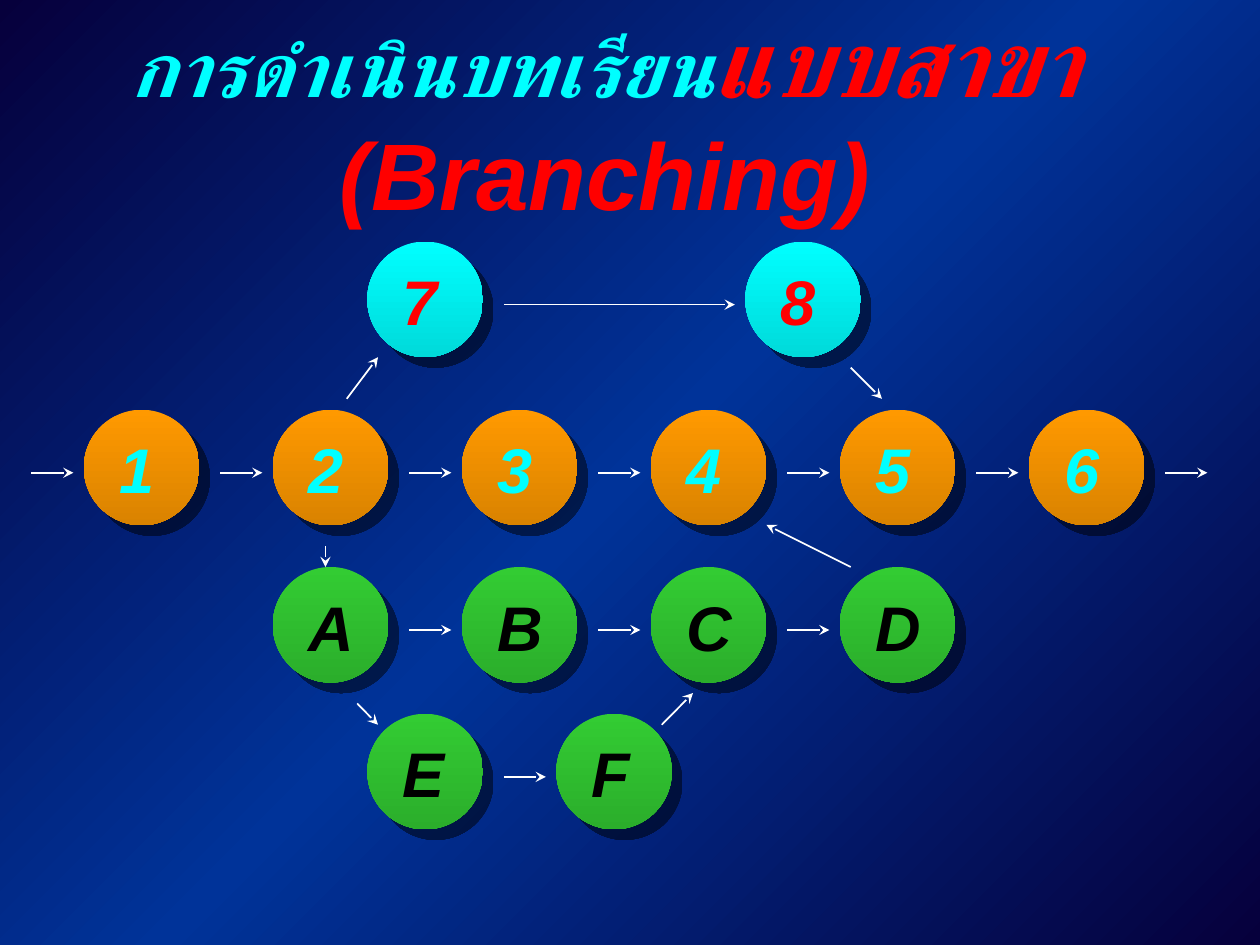
from pptx import Presentation
from pptx import util as u
from pptx.dml import color
from pptx.enum import shapes, text
from pptx.oxml import parse_xml
from pptx.oxml import ns

COLORS = {"night": "06003C", "royal": "003399", "cyan": "00FFFF", "red": "FF0000",
          "orange": "FF9900", "green": "33CC33", "black": "000000", "white": "FFFFFF"}
FONT = {"name": "Arial", "bold": True, "italic": True}
CIRCLE = 2.33
STEP = 3.81
FIRST_LEFT = 1.69
ROWS = [
    ("78", 1.5, 4.87, 2, "cyan", "red", 0),
    ("123456", 0, 8.26, 1, "orange", "cyan", 1),
    ("ABCD", 1, 11.43, 1, "green", "black", 0),
    ("EF", 1.5, 14.39, 1, "green", "black", 0),
]
BRANCHES = [
    (6.99, 8.04, 7.62, 7.2), (17.15, 7.41, 17.78, 8.04), (6.56, 11.01, 6.56, 11.43),
    (7.2, 14.18, 7.62, 14.61), (13.34, 14.61, 13.97, 13.97), (17.15, 11.43, 15.45, 10.58),
]


def make_element(tag, content="", **attributes):
    """Return a drawing element with the given attributes and inner markup."""
    values = " ".join(f'{key}="{value}"' for key, value in attributes.items())
    return parse_xml(f'<a:{tag} {ns.nsdecls("a")} {values}>{content}</a:{tag}>')


def set_values(target, values):
    """Set every named attribute on the target."""
    for key, value in values.items():
        setattr(target, key, value)


def paint_gradient(fill, element, angle, stops):
    """Fill with a linear gradient of (position, colour name, shade) stops."""
    fill.gradient()
    fill.gradient_angle = 360 - angle
    stop_list = element.find(".//" + ns.qn("a:gsLst"))
    for stop in list(stop_list):
        stop_list.remove(stop)
    for position, name, shade in stops:
        mark = f'<a:shade val="{shade * 1000}"/>' if shade < 100 else ""
        content = f'<a:srgbClr val="{COLORS[name]}">{mark}</a:srgbClr>'
        stop_list.append(make_element("gs", content, pos=position * 1000))


def write_span(para, words, size, name):
    """Add a bold italic run in the given size and colour."""
    span = para.add_run()
    span.text = words
    set_values(span.font, {**FONT, "size": u.Pt(size)})
    span.font.color.rgb = color.RGBColor.from_string(COLORS[name])


def draw_title(page, box):
    """Place and format the two-colour title."""
    title = page.shapes.title
    set_values(title, dict(zip(("left", "top", "width", "height"), map(u.Cm, box))))
    frame = title.text_frame
    set_values(frame, {"word_wrap": True, "auto_size": text.MSO_AUTO_SIZE.NONE,
                       "vertical_anchor": text.MSO_ANCHOR.MIDDLE, "margin_left": 0,
                       "margin_right": u.Cm(1.98), "margin_top": 0, "margin_bottom": 0})
    para = frame.paragraphs[0]
    set_values(para, {"alignment": text.PP_ALIGN.CENTER, "line_spacing": 1.0,
                      "space_before": u.Pt(0)})
    write_span(para, "การดำเนินบทเรียน", 44, "cyan")
    write_span(para, "แบบสาขา (Branching)", 54, "red")


def draw_arrow(page, *ends):
    """Draw a thin white arrow between two points."""
    arrow = page.shapes.add_connector(shapes.MSO_CONNECTOR.STRAIGHT, *map(u.Cm, ends))
    arrow.line.width = u.Pt(1)
    arrow.line.color.rgb = color.RGBColor.from_string(COLORS["white"])
    properties = arrow.element.spPr
    properties.find(ns.qn("a:ln")).append(make_element("tailEnd", type="stealth"))
    properties.append(make_element("effectLst"))


def draw_node(page, left, top, label, fill_name, font_name):
    """Draw a shaded circle with its label."""
    circle = page.shapes.add_shape(shapes.MSO_SHAPE.OVAL, *map(u.Cm, (left, top, CIRCLE, CIRCLE)))
    paint_gradient(circle.fill, circle.element, 90, [(0, fill_name, 100), (100, fill_name, 70)])
    circle.line.fill.background()
    circle.shadow.inherit = False
    tint = f'<a:srgbClr val="{COLORS["black"]}"><a:alpha val="50000"/></a:srgbClr>'
    effects = circle.element.spPr.find(ns.qn("a:effectLst"))
    effects.append(make_element("outerShdw", tint, dist=u.Pt(8.5), dir=45 * 60000,
                                algn="ctr", rotWithShape=0))
    box = page.shapes.add_textbox(*map(u.Cm, (left + 0.46, top + 0.3, 1.22, 1.78)))
    box.text_frame.word_wrap = False
    write_span(box.text_frame.paragraphs[0], label, 36, font_name)


def draw_row(page, left, top, step, labels, fill_name, font_name, outer):
    """Draw evenly spaced nodes with arrows between them and at open ends."""
    for index, label in enumerate(labels):
        draw_node(page, left + index * step, top, label, fill_name, font_name)
    for index in range(-outer, len(labels) - 1 + outer):
        start = left + index * step
        draw_arrow(page, start + 2.75, top + 1.27, start + step - 0.21, top + 1.27)


def main():
    """Build and save the branching lesson slide."""
    deck = Presentation()
    set_values(deck, {"slide_width": u.Cm(25.4), "slide_height": u.Cm(19.05)})
    page = deck.slides.add_slide(deck.slide_layouts[5])
    paint_gradient(page.background.fill, page.element, 45,
                   [(0, "night", 100), (50, "royal", 100), (100, "night", 100)])
    draw_title(page, (2.34, 1.07, 21.69, 2.54))
    for labels, column, top, stride, fill_name, font_name, outer in ROWS:
        draw_row(page, FIRST_LEFT + column * STEP, top, stride * STEP,
                 labels, fill_name, font_name, outer)
    for ends in BRANCHES:
        draw_arrow(page, *ends)
    deck.save("out.pptx")


if __name__ == "__main__":
    main()
